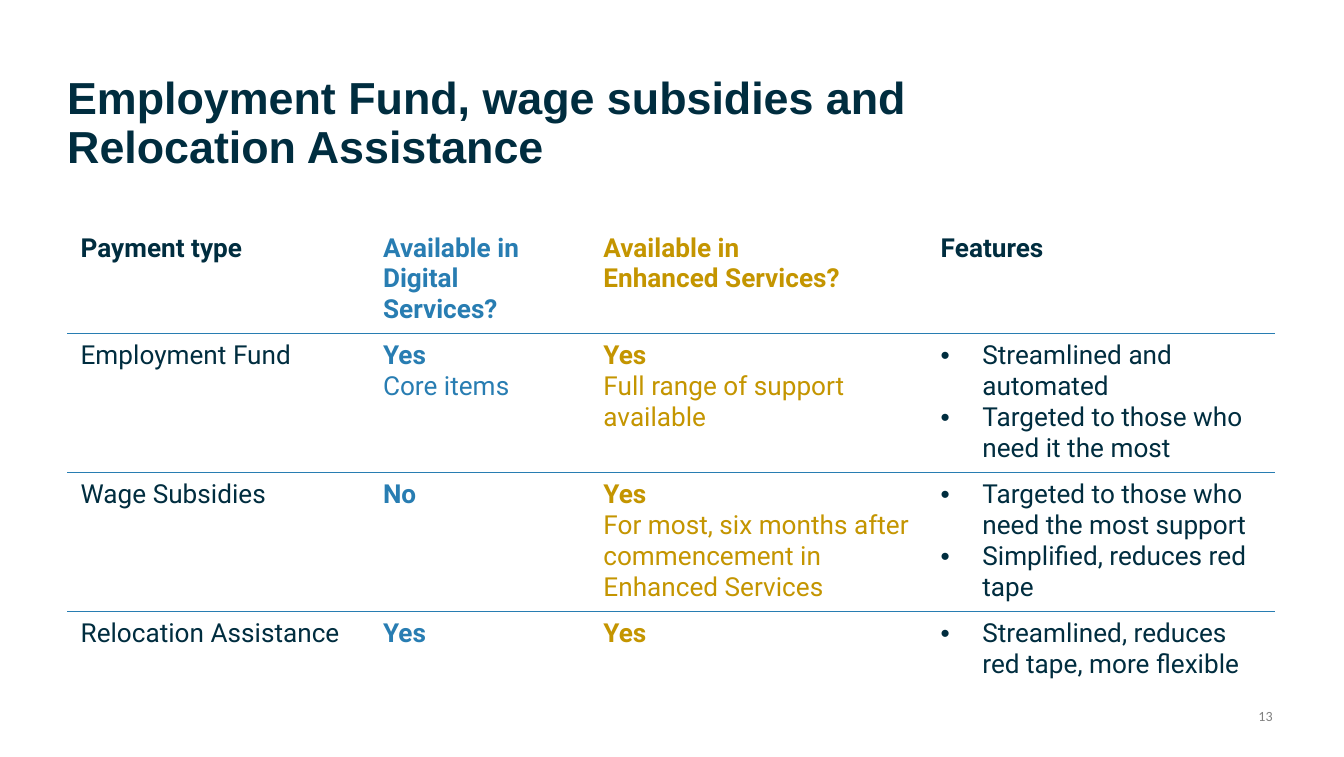
from lxml.etree import SubElement
from pptx import Presentation
from pptx.dml.color import RGBColor
from pptx.enum.text import MSO_ANCHOR, PP_ALIGN
from pptx.oxml import parse_xml
from pptx.oxml.ns import nsdecls, qn
from pptx.util import Inches, Pt

HUES = {"navy": "002D3F", "blue": "287DB2", "gold": "C49500", "grey": "808080"}
TITLE = "Employment Fund, wage subsidies and Relocation Assistance"
HEADS = ["Payment type", "Available in Digital Services?",
         "Available in\vEnhanced Services?", "Features"]
ROWS = [
    (["Employment Fund"], ["Yes", "Core items"],
     ["Yes", "Full range of support available"],
     ["Streamlined and automated", "Targeted to those who need it the most"]),
    (["Wage Subsidies"], ["No"],
     ["Yes", "For most, six months after commencement in Enhanced Services"],
     ["Targeted to those who need the most support",
      "Simplified, reduces red tape"]),
    (["Relocation Assistance"], ["Yes"], ["Yes"],
     ["Streamlined, reduces red tape, more flexible"]),
]
COLS = [(2.25, "navy"), (1.64, "blue"), (2.51, "gold"), (2.59, "navy")]
TALL = [0.59, 0.71, 0.71, 0.71]
PLAIN = "{2D5ABB26-0587-4C30-8999-92F81FD0307C}"


def style(para, face, size, hue, bold=False):
    """Set the font of a whole paragraph."""
    font = para.font
    font.name, font.size, font.bold = face, Pt(size), bold
    font.color.rgb = RGBColor.from_string(HUES[hue])


def label(slide, box, text, anchor):
    """Add a text box without margins and return its paragraph."""
    frame = slide.shapes.add_textbox(*map(Inches, box)).text_frame
    frame.word_wrap = True
    frame.vertical_anchor = anchor
    frame.margin_left = frame.margin_right = 0
    frame.margin_top = frame.margin_bottom = 0
    para = frame.paragraphs[0]
    para.text = text
    return para


def bullet(para):
    """Give a paragraph a hanging round bullet."""
    props = para._p.get_or_add_pPr()
    props.set("marL", str(Inches(0.31)))
    props.set("indent", str(-Inches(0.31)))
    SubElement(props, qn("a:buFont")).set("typeface", "Arial")
    SubElement(props, qn("a:buChar")).set("char", "•")


def rule(cell, sides):
    """Draw blue rules on the given sides of a cell."""
    props = cell._tc.get_or_add_tcPr()
    for spot, side in enumerate(sides):
        props.insert(spot, parse_xml(
            f'<a:ln{side} {nsdecls("a")} w="{Pt(1)}"><a:solidFill>'
            f'<a:srgbClr val="{HUES["blue"]}"/></a:solidFill></a:ln{side}>'))


def fill(cell, lines, row, col):
    """Write the lines of one cell."""
    cell.fill.background()
    frame = cell.text_frame
    for num, line in enumerate(lines):
        para = frame.add_paragraph() if num else frame.paragraphs[0]
        para.text = line
        if row and col == 3:
            bullet(para)
        bold = row == 0 or (col in (1, 2) and num == 0)
        style(para, "Roboto", 14, COLS[col][1], bold)


def main():
    """Build the slide."""
    deck = Presentation()
    deck.slide_width, deck.slide_height = Inches(10), Inches(5.63)
    slide = deck.slides.add_slide(deck.slide_layouts[6])

    head = label(slide, (0.5, 0.38, 6.96, 1.09), TITLE, MSO_ANCHOR.MIDDLE)
    head.line_spacing = 0.9
    style(head, "Arial", 24, "navy", True)

    page = label(slide, (9.16, 5.26, 0.31, 0.13), "13", MSO_ANCHOR.BOTTOM)
    page.alignment = PP_ALIGN.RIGHT
    style(page, "Calibri", 7.5, "grey")

    grid = [[[text] for text in HEADS], *ROWS]
    box = (0.5, 1.68, sum(wide for wide, _ in COLS), sum(TALL))
    table = slide.shapes.add_table(
        len(grid), len(COLS), *map(Inches, box)).table
    table.first_row = table.horz_banding = False
    table._tbl.tblPr.find(qn("a:tableStyleId")).text = PLAIN
    for col, (wide, _) in enumerate(COLS):
        table.columns[col].width = Inches(wide)
    for row, cells in enumerate(grid):
        table.rows[row].height = Inches(TALL[row])
        sides = ("T" if row else "") + ("B" if row < len(grid) - 1 else "")
        for col, lines in enumerate(cells):
            cell = table.cell(row, col)
            fill(cell, lines, row, col)
            rule(cell, sides)
    deck.save("out.pptx")


if __name__ == "__main__":
    main()
